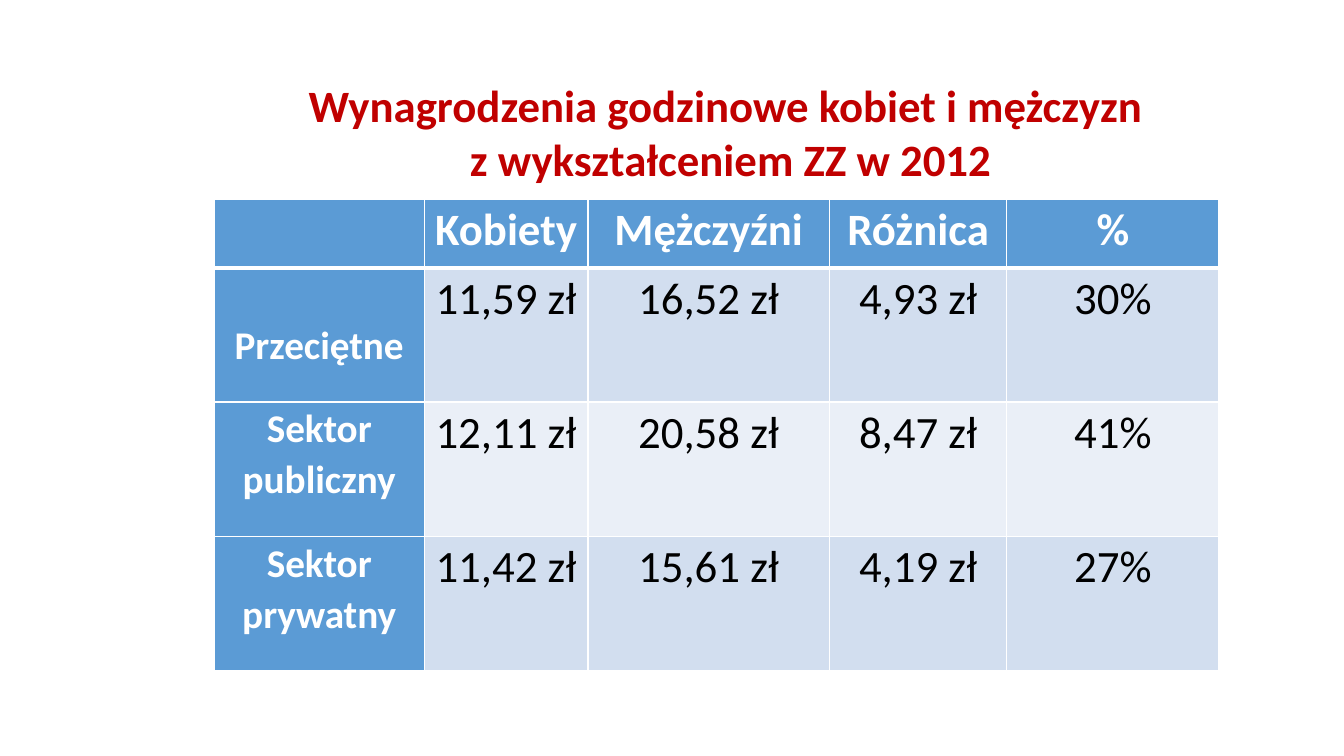
from dataclasses import dataclass

import pptx
import pptx.dml.color
import pptx.enum.text
import pptx.oxml
import pptx.oxml.ns
import pptx.util

EMU_PER_PX = 9525
FONT = "Calibri"
WHITE, BLACK, RED = "FFFFFF", "000000", "C00000"
HEADER_BLUE = "5B9BD5"
BAND_FILLS = ("D2DEEF", "EAEFF7")

COLUMN_WIDTHS = (200, 156, 230, 169, 202)
HEADER_HEIGHT, BODY_HEIGHT = 65, 128
SIDE_MARGIN = 7


@dataclass
class WageRow:
    label: str
    values: tuple[str, ...]
    label_top: int = 0


HEADINGS = ("", "Kobiety", "Mężczyźni", "Różnica", "%")
WAGE_ROWS = (
    WageRow("Przeciętne", ("11,59 zł", "16,52 zł", "4,93 zł", "30%"), label_top=49),
    WageRow("Sektor publiczny", ("12,11 zł", "20,58 zł", "8,47 zł", "41%")),
    WageRow("Sektor prywatny", ("11,42 zł", "15,61 zł", "4,19 zł", "27%")),
)


def px(length: int) -> pptx.util.Emu:
    return pptx.util.Emu(length * EMU_PER_PX)


def rgb(value: str) -> pptx.dml.color.RGBColor:
    return pptx.dml.color.RGBColor.from_string(value)


def add_run(paragraph, text: str, size: int, color: str, bold: bool) -> None:
    run = paragraph.add_run()
    run.text = text
    run.font.name = FONT
    run.font.size = pptx.util.Pt(size)
    run.font.bold = bold
    run.font.color.rgb = rgb(color)


def add_borders(cell, top: int, bottom: int) -> None:
    properties = cell._tc.get_or_add_tcPr()
    for side, points in (("L", 1), ("R", 1), ("T", top), ("B", bottom)):
        properties.append(pptx.oxml.parse_xml(
            f'<a:ln{side} {pptx.oxml.ns.nsdecls("a")} w="{pptx.util.Pt(points)}">'
            f'<a:solidFill><a:srgbClr val="{WHITE}"/></a:solidFill></a:ln{side}>'))


def format_cell(cell, text: str, fill: str, size: int = 32, color: str = WHITE,
                bold: bool = True, margin_top: int = 0,
                border_top: int = 1, border_bottom: int = 1) -> None:
    add_borders(cell, border_top, border_bottom)
    cell.fill.solid()
    cell.fill.fore_color.rgb = rgb(fill)
    cell.margin_left = cell.margin_right = px(SIDE_MARGIN)
    cell.margin_top, cell.margin_bottom = px(margin_top), 0
    paragraph = cell.text_frame.paragraphs[0]
    paragraph.alignment = pptx.enum.text.PP_ALIGN.CENTER
    paragraph.line_spacing = 1.07
    if text:
        add_run(paragraph, text, size, color, bold)


def add_title(slide) -> None:
    title = slide.shapes.title
    title.left, title.top, title.width, title.height = map(px, (144, 64, 1104, 122))
    frame = title.text_frame
    frame.word_wrap = True
    frame.auto_size = pptx.enum.text.MSO_AUTO_SIZE.NONE
    frame.vertical_anchor = pptx.enum.text.MSO_ANCHOR.MIDDLE
    paragraph = frame.paragraphs[0]
    paragraph.alignment = pptx.enum.text.PP_ALIGN.CENTER
    add_run(paragraph, "Wynagrodzenia godzinowe kobiet i mężczyzn ", 32, RED, True)
    paragraph.add_line_break()
    add_run(paragraph, "z wykształceniem ZZ w 2012", 32, RED, True)


def add_wage_table(slide) -> None:
    height = HEADER_HEIGHT + BODY_HEIGHT * len(WAGE_ROWS)
    table = slide.shapes.add_table(
        len(WAGE_ROWS) + 1, len(HEADINGS),
        px(204), px(190), px(sum(COLUMN_WIDTHS)), px(height)).table
    for column, width in zip(table.columns, COLUMN_WIDTHS):
        column.width = px(width)
    for index, row in enumerate(table.rows):
        row.height = px(BODY_HEIGHT if index else HEADER_HEIGHT)

    # Header row
    for index, heading in enumerate(HEADINGS):
        format_cell(table.cell(0, index), heading, HEADER_BLUE, border_bottom=3)

    # Wage rows with alternating bands
    for index, wages in enumerate(WAGE_ROWS, start=1):
        border_top = 3 if index == 1 else 1
        format_cell(table.cell(index, 0), wages.label, HEADER_BLUE, size=28,
                    margin_top=wages.label_top, border_top=border_top)
        band = BAND_FILLS[(index - 1) % len(BAND_FILLS)]
        for column, value in enumerate(wages.values, start=1):
            format_cell(table.cell(index, column), value, band, color=BLACK,
                        bold=False, border_top=border_top)


def main() -> None:
    presentation = pptx.Presentation()
    presentation.slide_width, presentation.slide_height = px(1280), px(720)
    slide = presentation.slides.add_slide(presentation.slide_layouts[5])
    add_title(slide)
    add_wage_table(slide)
    presentation.save("out.pptx")


if __name__ == "__main__":
    main()
